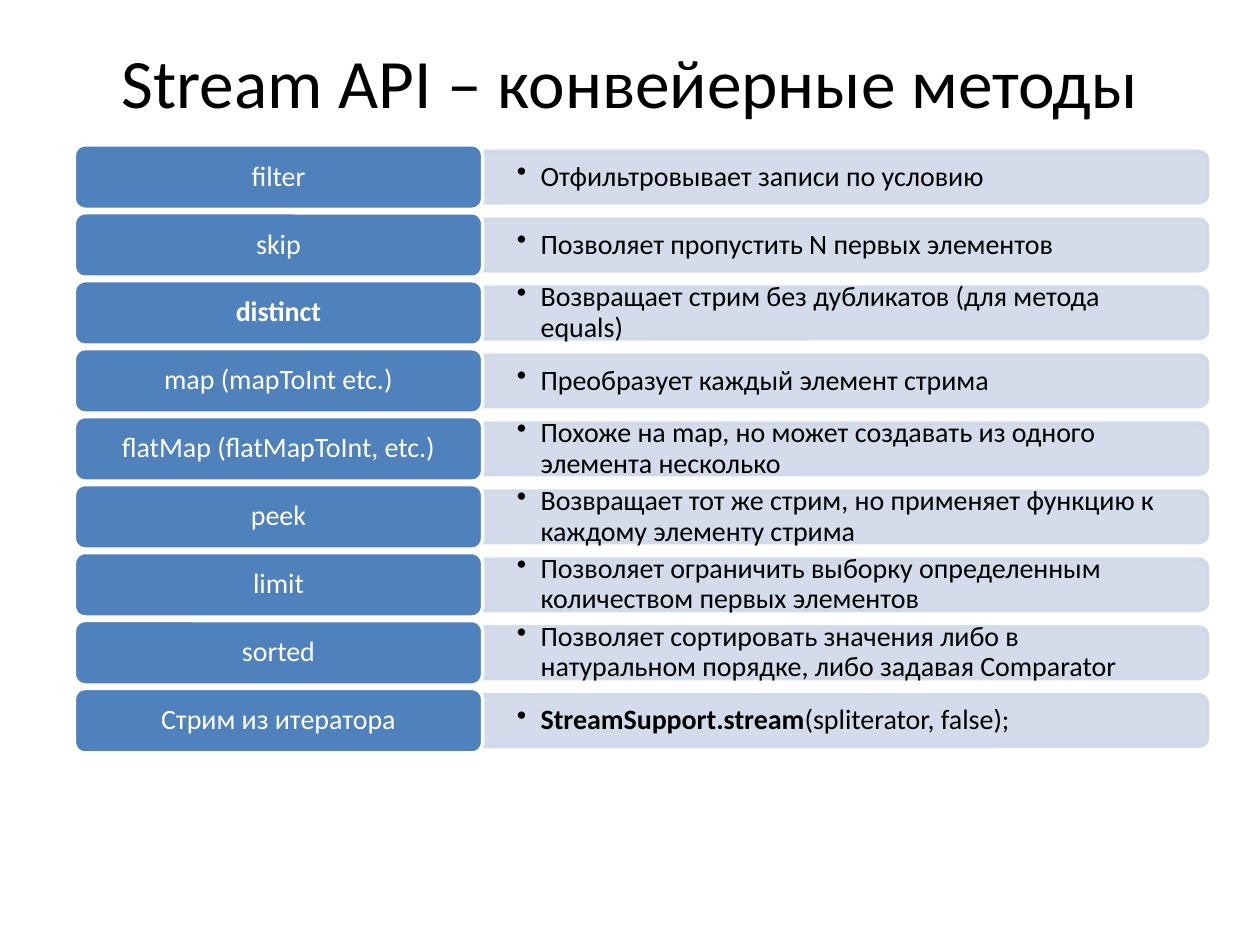
"""Build a slide that lists the intermediate methods of the Stream API."""
from pptx import Presentation
from pptx.dml.color import RGBColor
from pptx.enum.shapes import MSO_SHAPE
from pptx.enum.text import MSO_ANCHOR, PP_ALIGN
from pptx.oxml.ns import qn
from pptx.util import Cm, Pt
from lxml.etree import SubElement


def paint(form, hue):
    form.solid()
    form.fore_color.rgb = RGBColor.from_string(hue)


def setup(shape, size, hue, side=0, edge=0):
    frame = shape.text_frame
    frame.word_wrap = True
    frame.vertical_anchor = MSO_ANCHOR.MIDDLE
    frame.margin_left = frame.margin_right = Cm(side)
    frame.margin_top = frame.margin_bottom = Cm(edge)
    par = frame.paragraphs[0]
    par.font.name = "Calibri"
    par.font.size = Pt(size)
    paint(par.font.fill, hue)
    return par


ROWS = [
    ("filter", "", "Отфильтровывает записи по условию"),
    ("skip", "", "Позволяет пропустить N первых элементов"),
    ("distinct", "", "Возвращает стрим без дубликатов (для метода equals)"),
    ("map (mapToInt etc.)", "", "Преобразует каждый элемент стрима"),
    ("flatMap (flatMapToInt, etc.)", "",
     "Похоже на map, но может создавать из одного элемента несколько"),
    ("peek", "",
     "Возвращает тот же стрим, но применяет функцию к каждому элементу стрима"),
    ("limit", "",
     "Позволяет ограничить выборку определенным количеством первых элементов"),
    ("sorted", "",
     "Позволяет сортировать значения либо в натуральном порядке, "
     "либо задавая Comparator"),
    ("Стрим из итератора", "StreamSupport.stream", "(spliterator, false);"),
]
TOP, STEP, HIGH = 2.92, 1.37, 1.3
THICK, LONG = 1.04, 14.63

deck = Presentation()
deck.slide_width, deck.slide_height = Cm(25.4), Cm(19.05)
slide = deck.slides.add_slide(deck.slide_layouts[6])
shapes = slide.shapes

title = shapes.add_textbox(Cm(1.27), Cm(0.76), Cm(22.86), Cm(1.75))
par = setup(title, 39.6, "000000")
par.text = "Stream API – конвейерные методы"
par.alignment = PP_ALIGN.CENTER

for row, (name, lead, text) in enumerate(ROWS):
    top = TOP + row * STEP
    mid = top + HIGH / 2

    bar = shapes.add_shape(MSO_SHAPE.ROUND_2_SAME_RECTANGLE, Cm(16.51),
                           Cm(mid - LONG / 2), Cm(THICK), Cm(LONG))
    bar.rotation = 90
    bar.shadow.inherit = False
    bar.line.width = Pt(2)
    for form in (bar.fill, bar.line.fill):
        paint(form, "D0D8E8")
    for hue in bar._element.spPr.iter(qn("a:srgbClr")):
        SubElement(hue, qn("a:alpha")).set("val", "90000")

    note = shapes.add_textbox(Cm(9.73), Cm(mid - 0.47), Cm(14.58), Cm(0.94))
    par = setup(note, 16, "000000", 0.69, 0.36)
    par.line_spacing = 0.9
    props = par._p.get_or_add_pPr()
    props.set("marL", str(Cm(0.48)))
    props.set("indent", str(Cm(-0.48)))
    bullet = props.makeelement(qn("a:buChar"), {"char": "•"})
    props.insert_element_before(bullet, "a:tabLst", "a:defRPr", "a:extLst")
    if lead:
        run = par.add_run()
        run.text = lead
        run.font.bold = True
    par.add_run().text = text

    label = shapes.add_shape(MSO_SHAPE.ROUNDED_RECTANGLE, Cm(1.5), Cm(top),
                             Cm(8.23), Cm(HIGH))
    label.shadow.inherit = False
    paint(label.fill, "4F81BD")
    paint(label.line.fill, "FFFFFF")
    label.line.width = Pt(2)
    par = setup(label, 16, "FFFFFF", 0.24, 0.14)
    par.text = name
    par.alignment = PP_ALIGN.CENTER
    par.line_spacing = 0.9
    par.font.bold = name == "distinct"

deck.save("out.pptx")
